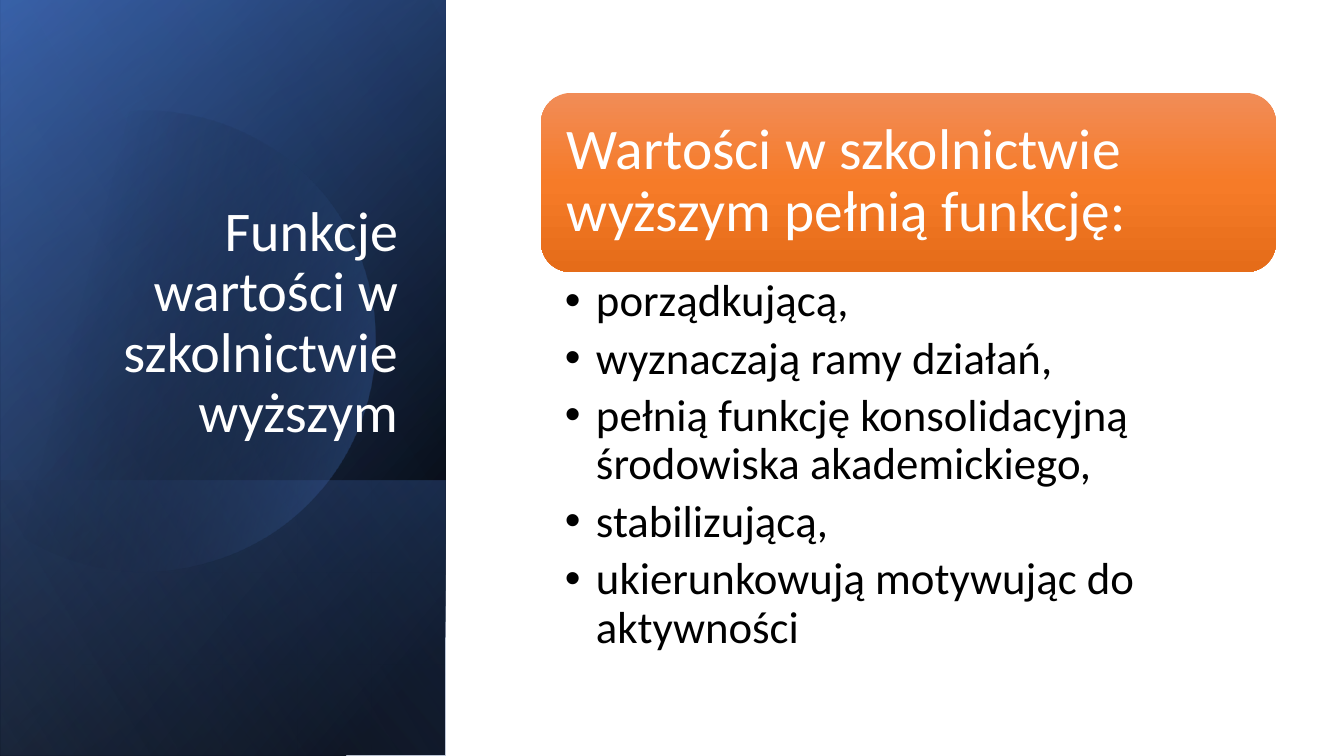
import pptx
import pptx.util
import pptx.dml.color
import pptx.enum.shapes
import pptx.enum.text
import pptx.oxml.ns
from lxml import etree

RGB = pptx.dml.color.RGBColor
KIND = pptx.enum.shapes.MSO_SHAPE
ALIGN = pptx.enum.text.PP_ALIGN
ANCHOR = pptx.enum.text.MSO_ANCHOR
qn = pptx.oxml.ns.qn
PX = 914400 / 100.8

BLACK = RGB(0x00, 0x00, 0x00)
WHITE = RGB(0xFF, 0xFF, 0xFF)
NAVY = RGB(0x2F, 0x55, 0x97)
BLUE = RGB(0x44, 0x72, 0xC4)
PALE = RGB(0x8F, 0xAA, 0xDC)
PEACH = RGB(0xF1, 0x8C, 0x57)
ORANGE = RGB(0xF6, 0x7B, 0x28)
RUST = RGB(0xE5, 0x6C, 0x19)


def shade(shape, angle, stops):
    """Gradient of (position %, colour, opacity %) stops, angle clockwise."""
    shape.shadow.inherit = False
    shape.line.fill.background()
    shape.fill.gradient()
    grad = shape._element.spPr.find(qn("a:gradFill"))
    grad.find(qn("a:lin")).set("ang", str(angle * 60000))
    items = grad.find(qn("a:gsLst"))
    for old in list(items):
        items.remove(old)
    for pos, color, alpha in stops:
        stop = etree.SubElement(items, qn("a:gs"), pos=str(pos * 1000))
        tint = etree.SubElement(stop, qn("a:srgbClr"), val=str(color))
        if alpha < 100:
            etree.SubElement(tint, qn("a:alpha"), val=str(alpha * 1000))


def write(shape, box, lines, size, color, anchor, insets):
    shape.left, shape.top, shape.width, shape.height = [round(v * PX) for v in box]
    frame = shape.text_frame
    frame.word_wrap = True
    frame.auto_size = pptx.enum.text.MSO_AUTO_SIZE.NONE
    frame.vertical_anchor = anchor
    (frame.margin_left, frame.margin_top,
     frame.margin_right, frame.margin_bottom) = [round(v * PX) for v in insets]
    frame.text = "\n".join(lines)
    for par in frame.paragraphs:
        par.line_spacing = 0.9
        font = par.runs[0].font
        font.name = "Calibri"
        font.size = pptx.util.Pt(size)
        font.color.rgb = color
    return frame.paragraphs


deck = pptx.Presentation()
deck.slide_width = round(1344 * PX)
deck.slide_height = round(756 * PX)
slide = deck.slides.add_slide(deck.slide_layouts[5])
shapes = slide.shapes
title = shapes.title

# Dark side panel: turned rectangles, with the disc later moved under the last
FULL = (-155, 155, 756, 445)
LOW = (85, 396, 276, 445)
panels = [
    (FULL, 50, [(8, BLACK, 100), (100, NAVY, 100)]),
    (FULL, 30, [(0, BLACK, 0), (99, BLUE, 46)]),
    (LOW, 130, [(2, BLUE, 29), (100, BLACK, 30)]),
    (FULL, 120, [(0, BLACK, 0), (99, PALE, 11)]),
]
for box, angle, stops in panels:
    panel = shapes.add_shape(KIND.RECTANGLE, *[round(v * PX) for v in box])
    panel.rotation = 90
    panel._element.spPr.find(qn("a:xfrm")).set("flipH", "1")
    shade(panel, angle, stops)

# Disc: one point makes a straight side, three make a curve
sides = [
    [(248, 113), (338, 178), (366, 277)],
    [(401, 400), (331, 527), (209, 562)],
    [(132, 585), (53, 566), (-3, 518)],
    [(-15, 507)],
    [(-15, 176)],
    [(0, 162)],
    [(23, 143), (50, 129), (81, 120)],
    [(104, 114), (127, 111), (150, 111)],
]
pen = shapes.build_freeform(150, 111, scale=PX)
pen.add_line_segments([side[-1] for side in sides], close=True)
disc = pen.convert_to_shape()
lines = list(disc._element.iter(qn("a:lnTo")))
for line, side in zip(lines, sides):
    if len(side) == 3:
        line.tag = qn("a:cubicBezTo")
        curve = etree.Element(qn("a:cubicBezTo"))
        for x, y in side:
            etree.SubElement(curve, qn("a:pt"), x=str(x + 15), y=str(y - 111))
        line.getparent().replace(line, curve)
shade(disc, 14, [(29, BLACK, 0), (100, BLUE, 43)])
panel._element.addprevious(disc._element)

# Title, kept in front of the panel
shapes._spTree.append(title._element)
pars = write(title, (65, 186, 343, 264), ["Funkcje wartości w szkolnictwie wyższym"],
             40, WHITE, ANCHOR.BOTTOM, (10, 5, 10, 5))
pars[0].alignment = ALIGN.RIGHT

# Orange heading
card = shapes.add_shape(KIND.ROUNDED_RECTANGLE,
                        *[round(v * PX) for v in (541, 93, 735, 179)])
shade(card, 90, [(0, PEACH, 100), (50, ORANGE, 100), (100, RUST, 100)])
write(shapes.add_textbox(0, 0, 0, 0), (550, 101, 718, 162),
      ["Wartości w szkolnictwie wyższym pełnią funkcję:"],
      41, WHITE, ANCHOR.MIDDLE, (17, 17, 17, 17))

# Bullet list
roles = [
    "porządkującą,",
    "wyznaczają ramy działań,",
    "pełnią funkcję konsolidacyjną środowiska akademickiego,",
    "stabilizującą,",
    "ukierunkowują motywując do aktywności",
]
pars = write(shapes.add_textbox(0, 0, 0, 0), (541, 272, 735, 402), roles,
             32, BLACK, ANCHOR.TOP, (24, 6, 32, 6))
for par in pars:
    par.level = 1
    par.space_after = pptx.util.Pt(6.4)
    props = par._p.get_or_add_pPr()
    props.set("marL", str(round(31 * PX)))
    props.set("indent", str(round(-31 * PX)))
    etree.SubElement(props, qn("a:buFont"), typeface="Arial")
    etree.SubElement(props, qn("a:buChar"), char="•")

deck.save("out.pptx")
